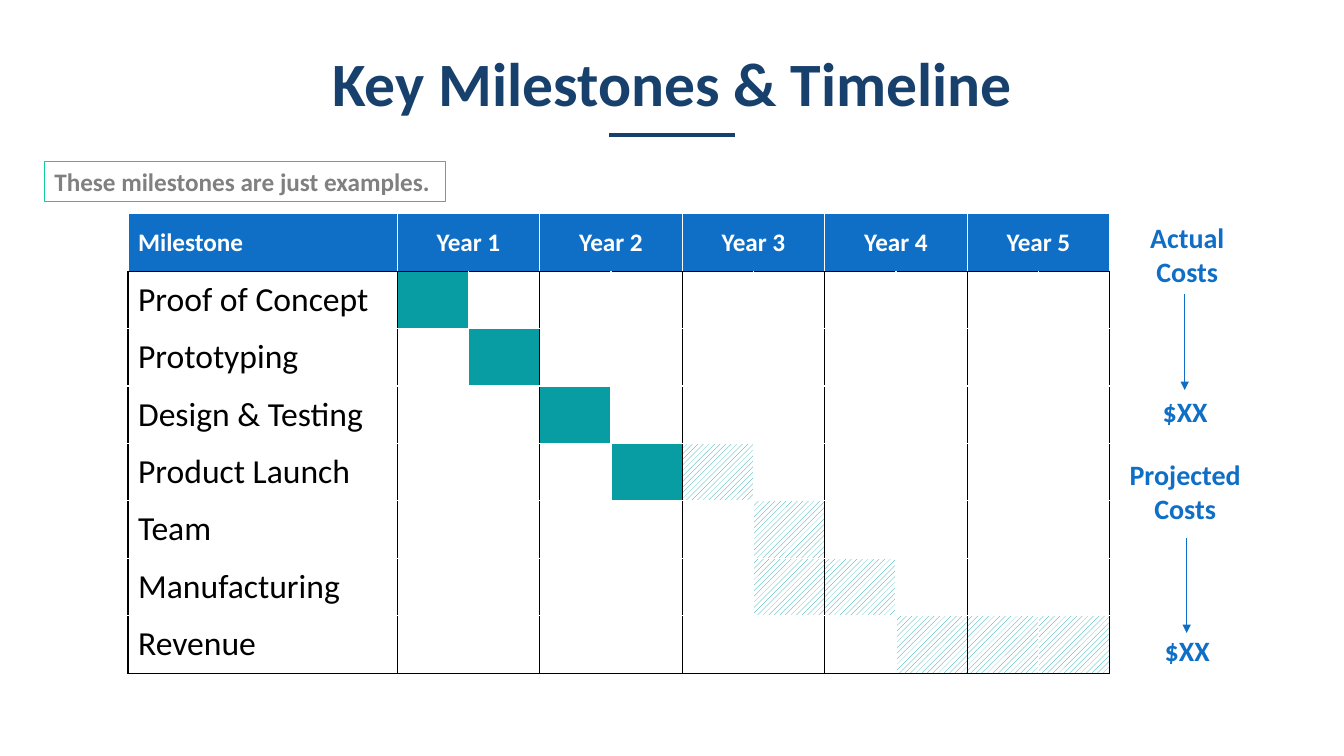
from lxml.etree import SubElement
from pptx import Presentation
from pptx.dml.color import RGBColor
from pptx.enum.dml import MSO_PATTERN as Pattern
from pptx.enum.shapes import MSO_CONNECTOR as Connector, MSO_SHAPE as Shape
from pptx.enum.text import MSO_ANCHOR as Anchor, MSO_AUTO_SIZE as AutoSize, PP_ALIGN as Align
from pptx.oxml.ns import qn
from pptx.util import Inches, Pt

TITLE = "Key Milestones & Timeline"
NOTE = "These milestones are just examples."
YEARS = ["Year 1", "Year 2", "Year 3", "Year 4", "Year 5"]
MILESTONES = [
    ("Proof of Concept", {1: "done"}),
    ("Prototyping", {2: "done"}),
    ("Design & Testing", {3: "done"}),
    ("Product Launch", {4: "done", 5: "planned"}),
    ("Team", {6: "planned"}),
    ("Manufacturing", {6: "planned", 7: "planned"}),
    ("Revenue", {8: "planned", 9: "planned", 10: "planned"}),
]
COSTS = [
    {"label": ("Actual Costs", 11.1, 2.14), "amount": ("$XX", 11.08, 3.86), "arrow": (11.75, 2.92, 3.87)},
    {"label": ("Projected Costs", 11.08, 4.49), "amount": ("$XX", 11.1, 6.24), "arrow": (11.77, 5.34, 6.28)},
]
NAVY, BLUE, TEAL, MINT = "17406D", "0F6FC6", "089CA3", "10CF9B"
GRAY, BLACK, WHITE = "808080", "000000", "FFFFFF"
GRID_LEFT, GRID_TOP = 1.27, 2.12
NAME_WIDTH, HALF_YEAR, ROW_HEIGHT = 2.67, 0.707, 0.57
COST_WIDTH, LABEL_HEIGHT, AMOUNT_HEIGHT = 1.35, 0.77, 0.44


def rgb(color):
    return RGBColor.from_string(color)


def write(frame, text, size=18, color=BLACK, bold=True, align=Align.LEFT, spacing=None, after=None):
    para = frame.paragraphs[0]
    para.alignment = align
    para.line_spacing = spacing
    if after is not None:
        para.space_after = Pt(after)
    span = para.add_run()
    span.text = text
    span.font.name, span.font.size, span.font.bold = "Calibri", Pt(size), bold
    span.font.color.rgb = rgb(color)


def add_line(page, start, end, color, width, arrow=False):
    line = page.shapes.add_connector(Connector.STRAIGHT, *map(Inches, start + end))
    line.line.color.rgb, line.line.width = rgb(color), Pt(width)
    if arrow:
        SubElement(line.line._get_or_add_ln(), qn("a:tailEnd"), type="triangle")
    SubElement(line._element.spPr, qn("a:effectLst"))


def add_cost_text(page, text, left, top, height):
    box = page.shapes.add_textbox(*map(Inches, (left, top, COST_WIDTH, height)))
    box.text_frame.word_wrap = True
    write(box.text_frame, text, size=20, color=BLUE, align=Align.CENTER)


def set_borders(cell, colors):
    properties = cell._tc.get_or_add_tcPr()
    for side, color in zip("LRTB", colors):
        border = SubElement(properties, qn(f"a:ln{side}"), w=str(Pt(1)))
        SubElement(SubElement(border, qn("a:solidFill")), qn("a:srgbClr"), val=color)


def paint(cell, status):
    if status == "planned":
        cell.fill.patterned()
        cell.fill.pattern = Pattern.WIDE_UPWARD_DIAGONAL
        cell.fill.fore_color.rgb, cell.fill.back_color.rgb = rgb(TEAL), rgb(WHITE)
    elif status:
        cell.fill.solid()
        cell.fill.fore_color.rgb = rgb({"done": TEAL, "header": BLUE}[status])
    else:
        cell.fill.background()


def cell_borders(row, column):
    if row == 0:
        return WHITE, WHITE, WHITE, BLACK
    left = WHITE if column and column % 2 == 0 else BLACK
    right = WHITE if column % 2 else BLACK
    return left, right, BLACK if row == 1 else WHITE, BLACK if row == len(MILESTONES) else WHITE


def add_timeline(page):
    rows, columns = len(MILESTONES) + 1, 2 * len(YEARS) + 1
    size = NAME_WIDTH + HALF_YEAR * (columns - 1), ROW_HEIGHT * rows
    table = page.shapes.add_table(rows, columns, *map(Inches, (GRID_LEFT, GRID_TOP) + size)).table
    table.first_row = table.horz_banding = False
    for index, column in enumerate(table.columns):
        column.width = Inches(HALF_YEAR if index else NAME_WIDTH)
    for row in range(rows):
        bars = MILESTONES[row - 1][1] if row else dict.fromkeys(range(columns), "header")
        for column in range(columns):
            cell = table.cell(row, column)
            cell.vertical_anchor = Anchor.MIDDLE
            set_borders(cell, cell_borders(row, column))
            paint(cell, bars.get(column))
    write(table.cell(0, 0).text_frame, "Milestone", color=WHITE)
    for index, year in enumerate(YEARS):
        first = table.cell(0, 2 * index + 1)
        first.merge(table.cell(0, 2 * index + 2))
        write(first.text_frame, year, color=WHITE, align=Align.CENTER)
    for row, (name, bars) in enumerate(MILESTONES, 1):
        write(table.cell(row, 0).text_frame, name, size=24, bold=False)


def add_title(page):
    title = page.shapes.title
    title.left, title.top, title.width, title.height = map(Inches, (0.57, 0.5, 12.2, 0.72))
    frame = title.text_frame
    frame.margin_left = frame.margin_right = frame.margin_top = frame.margin_bottom = 0
    frame.vertical_anchor, frame.auto_size = Anchor.MIDDLE, AutoSize.NONE
    write(frame, TITLE, size=44, color=NAVY, align=Align.CENTER, spacing=0.9)
    add_line(page, (6.04, 1.34), (7.29, 1.34), NAVY, 3)


def add_note(page):
    note = page.shapes.add_shape(Shape.RECTANGLE, *map(Inches, (0.44, 1.6, 3.98, 0.4)))
    note.shadow.inherit = False
    note.fill.solid()
    note.fill.fore_color.rgb = rgb(WHITE)
    note.line.color.rgb, note.line.width = rgb(MINT), Pt(0.75)
    note.text_frame.word_wrap = True
    note.text_frame.vertical_anchor = Anchor.TOP
    write(note.text_frame, NOTE, color=GRAY, after=3)


def main():
    deck = Presentation()
    deck.slide_width, deck.slide_height = Inches(13.33), Inches(7.5)
    page = deck.slides.add_slide(deck.slide_layouts[5])
    add_title(page)
    add_timeline(page)
    add_note(page)
    for cost in COSTS:
        add_cost_text(page, *cost["label"], LABEL_HEIGHT)
        add_cost_text(page, *cost["amount"], AMOUNT_HEIGHT)
        x, top, bottom = cost["arrow"]
        add_line(page, (x, top), (x, bottom), BLUE, 0.5, arrow=True)
    deck.save("out.pptx")


if __name__ == "__main__":
    main()
